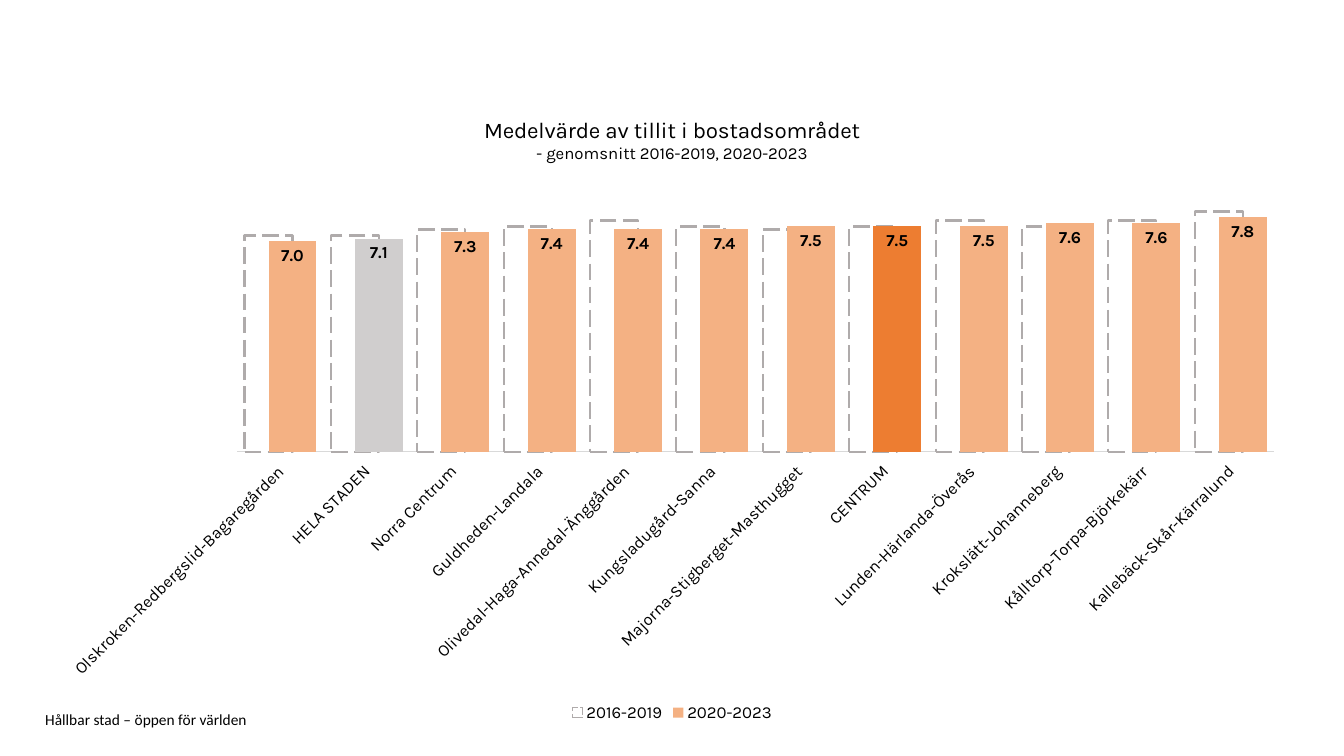
from pptx import Presentation
from pptx.chart.data import CategoryChartData
from pptx.dml.color import RGBColor
from pptx.enum.chart import XL_CHART_TYPE, XL_LABEL_POSITION, XL_LEGEND_POSITION, XL_TICK_LABEL_POSITION, XL_TICK_MARK
from pptx.enum.dml import MSO_LINE
from pptx.enum.text import MSO_ANCHOR
from pptx.util import Cm, Pt

AREAS = [
    ("Olskroken-Redbergslid-Bagaregården", 7.2, 7.0),
    ("HELA STADEN", 7.2, 7.1),
    ("Norra Centrum", 7.4, 7.3),
    ("Guldheden-Landala", 7.5, 7.4),
    ("Olivedal-Haga-Annedal-Änggården", 7.7, 7.4),
    ("Kungsladugård-Sanna", 7.5, 7.4),
    ("Majorna-Stigberget-Masthugget", 7.4, 7.5),
    ("CENTRUM", 7.5, 7.5),
    ("Lunden-Härlanda-Överås", 7.7, 7.5),
    ("Krokslätt-Johanneberg", 7.5, 7.6),
    ("Kålltorp-Torpa-Björkekärr", 7.7, 7.6),
    ("Kallebäck-Skår-Kärralund", 8.0, 7.8),
]
HIGHLIGHTS = {"HELA STADEN": "D0CECE", "CENTRUM": "ED7D31"}


def rgb(code):
    return RGBColor.from_string(code)


class SlideBuilder:
    chart_font = "Karla"
    footer_font = "Calibri"
    text_color = "000000"

    def __init__(self, slide):
        self.slide = slide

    def style_font(self, font, size, name, bold=False):
        font.size = Pt(size)
        font.name = name
        font.bold = bold
        font.color.rgb = rgb(self.text_color)

    def fill(self, part, color):
        part.format.fill.solid()
        part.format.fill.fore_color.rgb = rgb(color)

    def footer(self, text, left, top, width, height):
        frame = self.slide.shapes.add_textbox(Cm(left), Cm(top), Cm(width), Cm(height)).text_frame
        frame.word_wrap = True
        frame.vertical_anchor = MSO_ANCHOR.MIDDLE
        frame.margin_left = frame.margin_right = frame.margin_top = frame.margin_bottom = 0
        frame.text = text
        self.style_font(frame.paragraphs[0].runs[0].font, 11, self.footer_font)

    def column_chart(self, left, top, width, height):
        names, earlier_values, later_values = zip(*AREAS)
        trust = CategoryChartData(number_format="0.0")
        trust.categories = names
        trust.add_series("2016-2019", earlier_values)
        trust.add_series("2020-2023", later_values)
        chart = self.slide.shapes.add_chart(
            XL_CHART_TYPE.COLUMN_CLUSTERED, Cm(left), Cm(top), Cm(width), Cm(height), trust
        ).chart
        self.style_font(chart.font, 12, self.chart_font)
        self.chart_title(chart, [("Medelvärde av tillit i bostadsområdet", 16),
                                 ("- genomsnitt 2016-2019, 2020-2023", 12)])
        self.axes(chart)
        self.columns(chart.plots[0], names)
        chart.has_legend = True
        chart.legend.position = XL_LEGEND_POSITION.BOTTOM
        chart.legend.include_in_layout = False
        self.style_font(chart.legend.font, 12, self.chart_font)

    def chart_title(self, chart, lines):
        chart.has_title = True
        chart.chart_title.include_in_layout = False
        frame = chart.chart_title.text_frame
        frame.text = "\n".join(text for text, size in lines)
        for paragraph, (text, size) in zip(frame.paragraphs, lines):
            self.style_font(paragraph.font, size, self.chart_font)
            self.style_font(paragraph.runs[0].font, size, self.chart_font)

    def axes(self, chart):
        areas = chart.category_axis
        areas.major_tick_mark = areas.minor_tick_mark = XL_TICK_MARK.NONE
        areas.tick_label_position = XL_TICK_LABEL_POSITION.LOW
        areas.format.line.color.rgb = rgb("D9D9D9")
        areas.format.line.width = Pt(0.75)
        self.style_font(areas.tick_labels.font, 12, self.chart_font)
        label_body = areas.tick_labels.font._element.getparent().getparent().getparent().find(
            "{http://schemas.openxmlformats.org/drawingml/2006/main}bodyPr")
        label_body.set("rot", "-2700000")
        label_body.set("vert", "horz")
        values = chart.value_axis
        values.minimum_scale = 0
        values.maximum_scale = 9
        values.has_major_gridlines = False
        values.visible = False

    def columns(self, plot, names):
        plot.gap_width = 30
        plot.overlap = 50
        plot.vary_by_categories = False
        earlier, later = plot.series
        self.fill(earlier, "FFFFFF")
        outline = earlier.format.line
        outline.color.rgb = rgb("AFABAB")
        outline.width = Pt(1.5)
        outline.dash_style = MSO_LINE.LONG_DASH
        self.fill(later, "F4B183")
        for name, color in HIGHLIGHTS.items():
            self.fill(later.points[names.index(name)], color)
        for period in (earlier, later):
            period.invert_if_negative = False
        labels = later.data_labels
        labels.show_value = True
        labels.position = XL_LABEL_POSITION.INSIDE_END
        labels.number_format = "0.0"
        labels.number_format_is_linked = False
        self.style_font(labels.font, 12, self.chart_font, bold=True)


def main():
    deck = Presentation()
    deck.slide_width = Cm(33.87)
    deck.slide_height = Cm(19.05)
    builder = SlideBuilder(deck.slides.add_slide(deck.slide_layouts[6]))
    builder.footer("Hållbar stad – öppen för världen", 1.14, 17.93, 24, 0.4)
    builder.column_chart(1.14, 2.41, 31.6, 15.9)
    deck.save("out.pptx")


if __name__ == "__main__":
    main()
